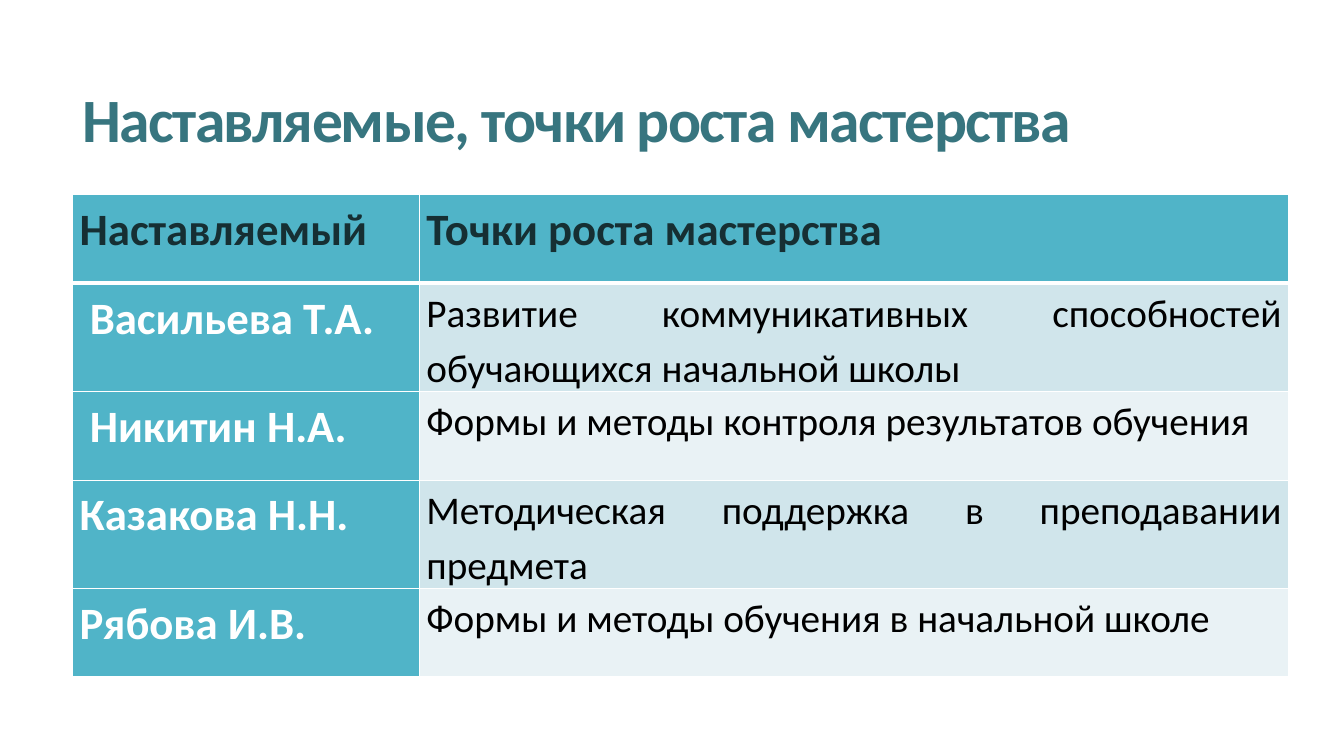
from dataclasses import dataclass

from lxml import etree
from pptx import Presentation
from pptx import util as u
from pptx.dml.color import RGBColor
from pptx.enum import text
from pptx.oxml import ns

WHITE = RGBColor(0xFF, 0xFF, 0xFF)
BLACK = RGBColor(0, 0, 0)
TITLE = RGBColor(0x37, 0x75, 0x7F)
DARK = RGBColor(0x16, 0x2F, 0x33)
TEAL = RGBColor(0x50, 0xB4, 0xC8)
BANDS = (RGBColor(0xD0, 0xE5, 0xEB), RGBColor(0xE9, 0xF2, 0xF5))
WIDTHS = (3.44, 8.62)
ROW = 0.88


@dataclass
class Mentee:
    name: str
    goal: str


HEAD = Mentee("Наставляемый", "Точки роста мастерства")
MENTEES = (
    Mentee(" Васильева Т.А.", "Развитие коммуникативных способностей обучающихся начальной школы"),
    Mentee(" Никитин Н.А.", "Формы и методы контроля результатов обучения"),
    Mentee("Казакова Н.Н.", "Методическая поддержка в преподавании предмета"),
    Mentee("Рябова И.В.", "Формы и методы обучения в начальной школе"),
)


def write(frame, words: str, *, size: float, color: RGBColor, bold: bool = True,
          align=None, line: float | None = None, space: int | None = None) -> None:
    """Fill a text frame with one paragraph; space is in hundredths of a point."""
    para = frame.paragraphs[0]
    para.alignment = align
    para.line_spacing = line
    run = para.add_run()
    run.text = words
    font = run.font
    font.name, font.size, font.bold = "Calibri", u.Pt(size), bold
    font.color.rgb = color
    if space is not None:
        font._element.set("spc", str(space))


def edge(cell, side: str, width: float) -> None:
    """Draw one white border; call before the cell is filled."""
    props = cell._tc.get_or_add_tcPr()
    line = etree.SubElement(props, ns.qn(f"a:ln{side}"), w=str(u.Pt(width)))
    fill = etree.SubElement(line, ns.qn("a:solidFill"))
    etree.SubElement(fill, ns.qn("a:srgbClr"), val=str(WHITE))


def put(cell, words: str, *, fill: RGBColor, size: float, color: RGBColor,
        bold: bool = True, top: float = 1, base: float = 1) -> None:
    """Format and fill one table cell."""
    cell.margin_left = cell.margin_right = u.Inches(0.07)
    cell.margin_top = cell.margin_bottom = 0
    for side, width in (("L", 1), ("R", 1), ("T", top), ("B", base)):
        edge(cell, side, width)
    cell.fill.solid()
    cell.fill.fore_color.rgb = fill
    write(cell.text_frame, words, size=size, color=color, bold=bold,
          align=text.PP_ALIGN.JUSTIFY, line=1.15)


def add_title(slide) -> None:
    box = slide.shapes.add_textbox(u.Inches(0.72), u.Inches(0.51), u.Inches(11.78), u.Inches(1.31))
    frame = box.text_frame
    frame.word_wrap = True
    frame.vertical_anchor = text.MSO_ANCHOR.MIDDLE
    write(frame, "Наставляемые, точки роста мастерства", size=44, color=TITLE, space=-120)


def add_goals(slide) -> None:
    count = len(MENTEES) + 1
    table = slide.shapes.add_table(count, 2, u.Inches(0.72), u.Inches(1.93),
                                   u.Inches(sum(WIDTHS)), u.Inches(ROW * count)).table
    for col, width in zip(table.columns, WIDTHS):
        col.width = u.Inches(width)
    for row in table.rows:
        row.height = u.Inches(ROW)
    for col, words in enumerate((HEAD.name, HEAD.goal)):
        put(table.cell(0, col), words, fill=TEAL, size=32, color=DARK, base=3)
    for row, who in enumerate(MENTEES, 1):
        top = 3 if row == 1 else 1
        put(table.cell(row, 0), who.name, fill=TEAL, size=32, color=WHITE, top=top)
        put(table.cell(row, 1), who.goal, fill=BANDS[(row - 1) % 2], size=28,
            color=BLACK, bold=False, top=top)


def main() -> None:
    deck = Presentation()
    deck.slide_width, deck.slide_height = u.Inches(13.33), u.Inches(7.5)
    slide = deck.slides.add_slide(deck.slide_layouts[6])
    add_title(slide)
    add_goals(slide)
    deck.save("out.pptx")


if __name__ == "__main__":
    main()
